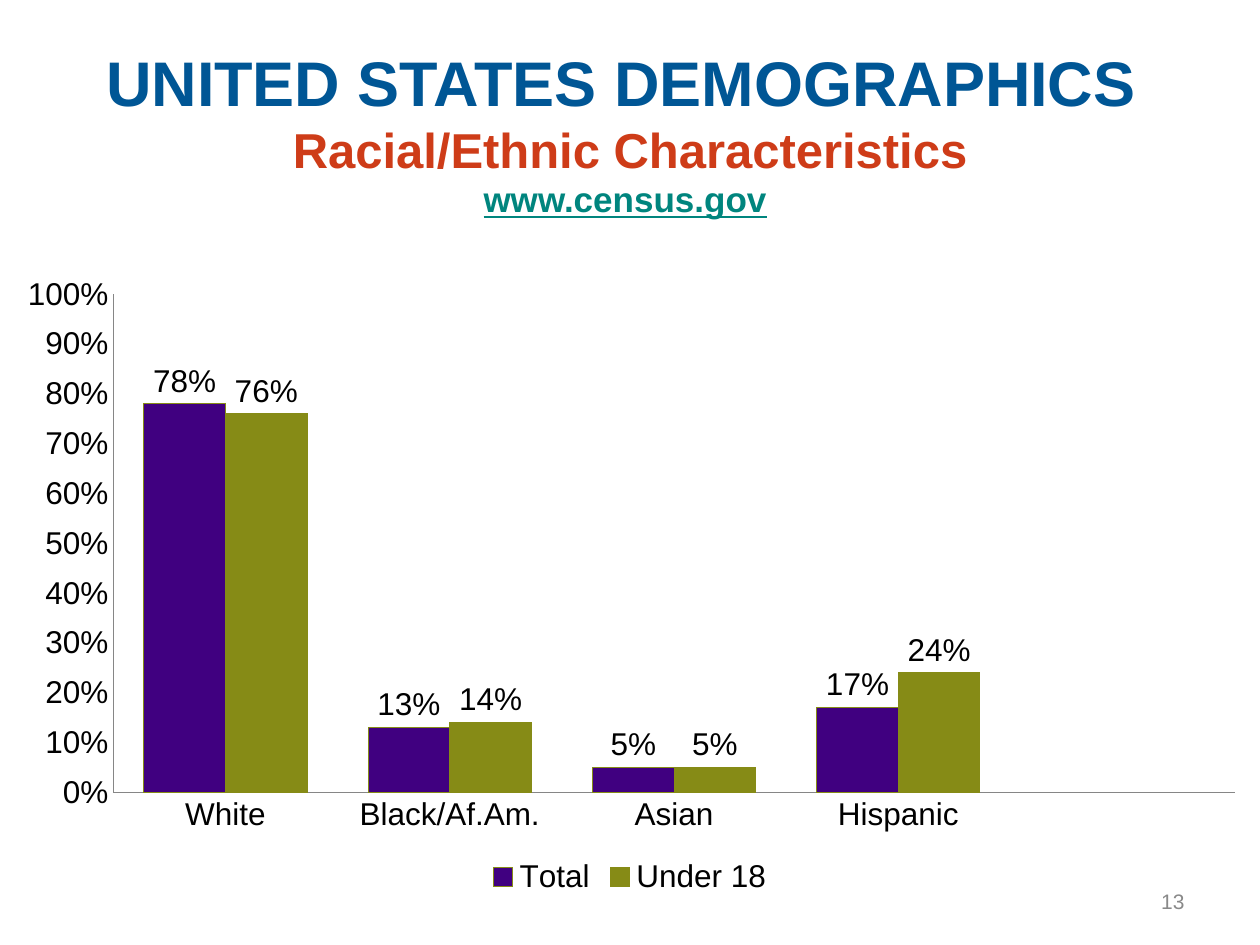
import pptx
import pptx.chart.data
import pptx.dml.color
import pptx.enum.chart
import pptx.enum.text
import pptx.util
from lxml import etree
from pptx.util import Inches

COLORS = {
    "title": "005695", "subtitle": "CE3C18", "site": "00857E",
    "text": "000000", "axis": "868686", "number": "898989",
    "total": "400080", "under_18": "868B16",
}
ALIGN = pptx.enum.text.PP_ALIGN


def rgb(name):
    return pptx.dml.color.RGBColor.from_string(COLORS[name])


class DemographicsSlide:
    font_name = "Arial"

    def __init__(self, deck):
        self.slide = deck.slides.add_slide(deck.slide_layouts[5])

    def style_font(self, font, size, color, bold=False, underline=False):
        font.name = self.font_name
        font.size = pptx.util.Pt(size)
        font.color.rgb = rgb(color)
        font.bold = bold
        font.underline = underline

    def prepare_frame(self, shape, box, align):
        shape.left, shape.top, shape.width, shape.height = map(Inches, box)
        frame = shape.text_frame
        frame.word_wrap = True
        frame.auto_size = pptx.enum.text.MSO_AUTO_SIZE.NONE
        frame.vertical_anchor = pptx.enum.text.MSO_ANCHOR.MIDDLE
        frame.paragraphs[0].alignment = align
        return frame.paragraphs[0]

    def add_run(self, paragraph, text, *style):
        run = paragraph.add_run()
        run.text = text
        self.style_font(run.font, *style)

    def add_title(self, box, lines):
        heading = self.prepare_frame(self.slide.shapes.title, box, ALIGN.CENTER)
        for index, runs in enumerate(lines):
            if index:
                heading.add_line_break()
            for text, *style in runs:
                self.add_run(heading, text, *style)

    def add_page_number(self, box, text):
        shape = self.slide.shapes.add_textbox(*map(Inches, box))
        number = self.prepare_frame(shape, box, ALIGN.RIGHT)
        self.add_run(number, text, 12, "number")

    def add_column_chart(self, box, categories, series, plot_box):
        data = pptx.chart.data.CategoryChartData(number_format="0%")
        data.categories = categories
        for name, values, _ in series:
            data.add_series(name, values)
        chart = self.slide.shapes.add_chart(
            pptx.enum.chart.XL_CHART_TYPE.COLUMN_CLUSTERED,
            *map(Inches, box), data).chart
        chart.has_title = False
        self.style_font(chart.font, 18, "text")

        # Columns and their labels
        plot = chart.plots[0]
        plot.gap_width, plot.overlap = 75, 0
        plot.vary_by_categories = False
        for columns, (_, _, color) in zip(plot.series, series):
            columns.format.fill.solid()
            columns.format.fill.fore_color.rgb = rgb(color)
            columns.format.line.color.rgb = rgb("under_18")
            columns.invert_if_negative = False
            labels = columns.data_labels
            labels.show_value = True
            labels.number_format = "0%"
            labels.number_format_is_linked = False
            labels.position = pptx.enum.chart.XL_LABEL_POSITION.OUTSIDE_END

        # Axes
        for axis in (chart.category_axis, chart.value_axis):
            axis.has_major_gridlines = False
            axis.major_tick_mark = pptx.enum.chart.XL_TICK_MARK.NONE
            axis.format.line.color.rgb = rgb("axis")
        percent = chart.value_axis
        percent.minimum_scale, percent.maximum_scale = 0, 1
        percent.major_unit = 0.1
        percent.tick_labels.number_format = "0%"
        percent.tick_labels.number_format_is_linked = False

        # Legend
        chart.has_legend = True
        chart.legend.position = pptx.enum.chart.XL_LEGEND_POSITION.BOTTOM
        chart.legend.include_in_layout = False
        self.place_plot(chart, plot_box)

    def place_plot(self, chart, plot_box):
        """Fix the inner plot area, in fractions of the chart."""
        area = chart.plots[0]._element.getparent()
        space = area.nsmap["c"]
        for old in area.findall(f"{{{space}}}layout"):
            area.remove(old)
        layout = etree.Element(f"{{{space}}}layout")
        manual = etree.SubElement(layout, f"{{{space}}}manualLayout")
        settings = [("layoutTarget", "inner"), ("xMode", "edge"), ("yMode", "edge")]
        settings += zip("xywh", plot_box)
        for tag, value in settings:
            etree.SubElement(manual, f"{{{space}}}{tag}").set("val", str(value))
        area.insert(0, layout)


def main():
    deck = pptx.Presentation()
    deck.slide_width, deck.slide_height = Inches(10), Inches(7.5)
    page = DemographicsSlide(deck)

    # Heading
    page.add_title((0.5, 0.42, 9, 1.25), [
        [("UNITED STATES DEMOGRAPHICS ", 36, "title", True)],
        [("Racial/Ethnic Characteristics", 28, "subtitle", True)],
        [("www.census.gov", 20, "site", True, True),
         (" ", 20, "subtitle", True)],
    ])

    # Shares by group, with a free slot at the right
    page.add_column_chart(
        (0, 2.08, 10, 5.07),
        ["White", "Black/Af.Am.", "Asian", "Hispanic", ""],
        [("Total", (0.78, 0.13, 0.05, 0.17, None), "total"),
         ("Under 18", (0.76, 0.14, 0.05, 0.24, None), "under_18")],
        plot_box=(0.09, 0.05, 0.89, 0.78))

    # Page number
    page.add_page_number((7.17, 6.95, 2.33, 0.4), "13")
    deck.save("out.pptx")


if __name__ == "__main__":
    main()
